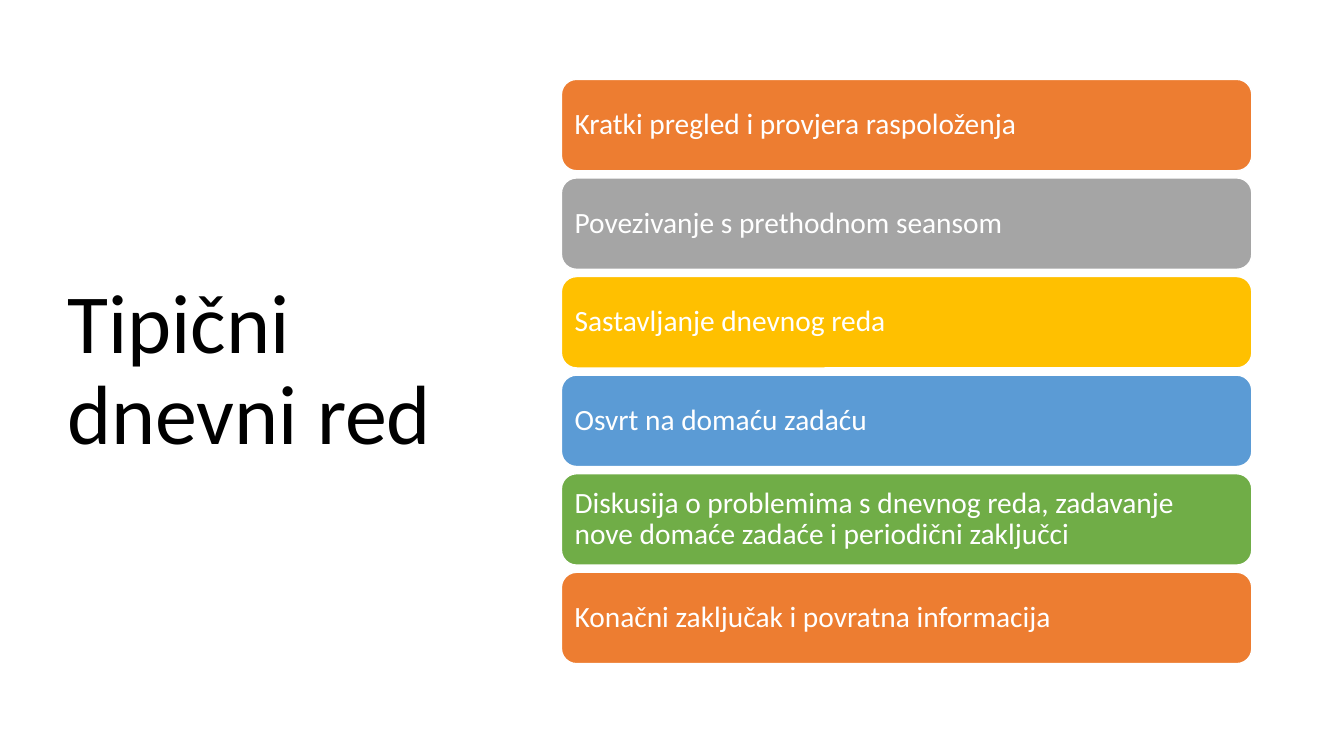
from pptx import Presentation
from pptx.dml.color import RGBColor
from pptx.enum.shapes import MSO_SHAPE as Shape
from pptx.enum.text import MSO_ANCHOR as Anchor, PP_ALIGN as Align
from pptx.util import Pt

FONT = "Calibri"
AGENDA = [
    ("Kratki pregled i provjera raspoloženja", "ED7D31"),
    ("Povezivanje s prethodnom seansom", "A5A5A5"),
    ("Sastavljanje dnevnog reda", "FFC000"),
    ("Osvrt na domaću zadaću", "5B9BD5"),
    ("Diskusija o problemima s dnevnog reda, zadavanje "
     "nove domaće zadaće i periodični zaključci", "70AD47"),
    ("Konačni zaključak i povratna informacija", "ED7D31"),
]


def color(target, code):
    target.rgb = RGBColor.from_string(code)


def write(shape, text, size, code):
    frame = shape.text_frame
    frame.word_wrap = True
    frame.vertical_anchor = Anchor.MIDDLE
    para = frame.paragraphs[0]
    para.text = text
    para.alignment = Align.LEFT
    para.line_spacing = 0.9
    para.font.name = FONT
    para.font.size = Pt(size)
    color(para.font.color, code)
    return frame


def add_title(slide, left, top, width, height):
    box = slide.shapes.add_textbox(Pt(left), Pt(top), Pt(width), Pt(height))
    write(box, "Tipični dnevni red", 60, "000000")


def add_agenda(slide, left, top, width, height, gap=5.1):
    count = len(AGENDA)
    tall = (height - gap * (count - 1)) / count
    for row, (text, code) in enumerate(AGENDA):
        bar = slide.shapes.add_shape(
            Shape.ROUNDED_RECTANGLE, Pt(left), Pt(top + row * (tall + gap)),
            Pt(width), Pt(tall))
        bar.shadow.inherit = False
        bar.fill.solid()
        color(bar.fill.fore_color, code)
        color(bar.line.color, "FFFFFF")
        bar.line.width = Pt(1)
        frame = write(bar, text, 21, "FFFFFF")
        frame.margin_left = frame.margin_right = Pt(6.3)
        frame.margin_top = frame.margin_bottom = Pt(6.3)


def main():
    deck = Presentation()
    deck.slide_width, deck.slide_height = Pt(960), Pt(540)
    slide = deck.slides.add_slide(deck.slide_layouts[6])
    add_title(slide, 41, 49, 299.5, 433.4)
    add_agenda(slide, 401, 56.7, 493.2, 417.4)
    deck.save("out.pptx")


if __name__ == "__main__":
    main()
